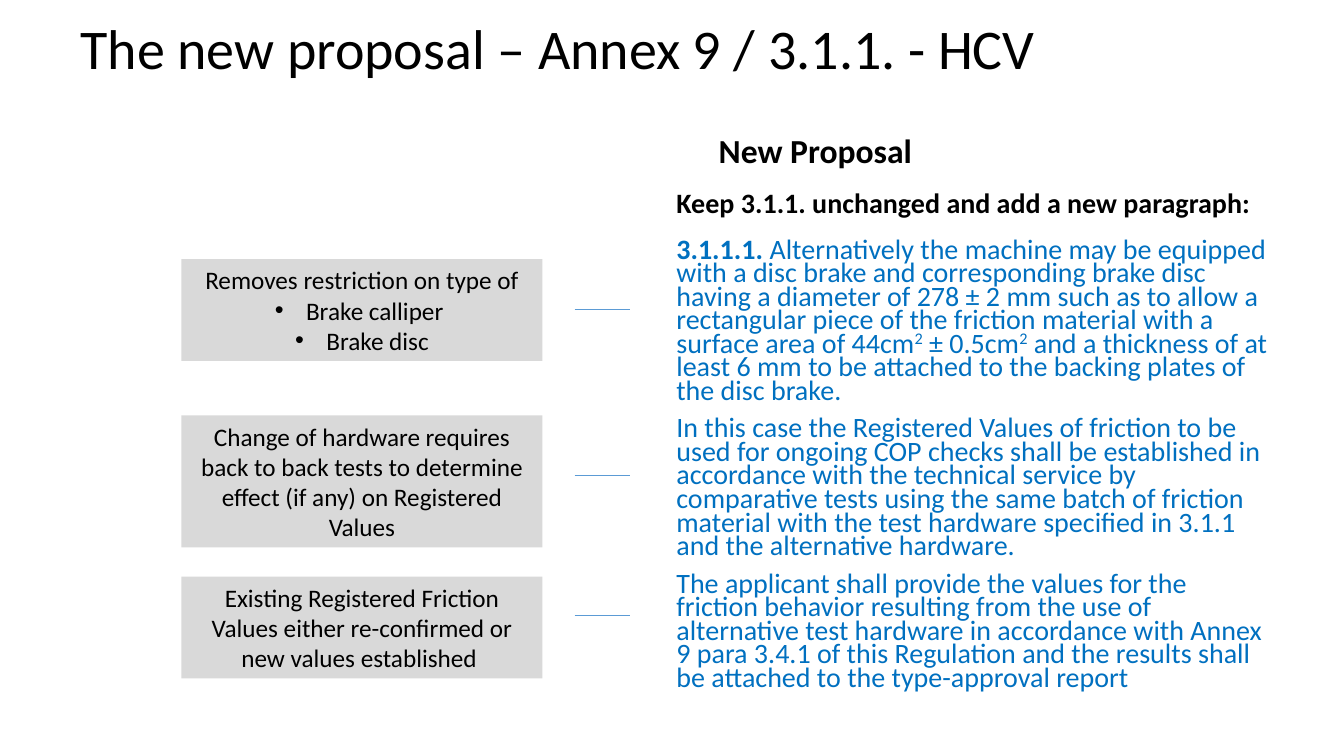
from lxml import etree
from pptx import Presentation
from pptx.dml.color import RGBColor
from pptx.enum.shapes import MSO_CONNECTOR, MSO_SHAPE
from pptx.enum.text import MSO_ANCHOR, PP_ALIGN
from pptx.oxml.ns import qn
from pptx.util import Inches, Pt

RECTANGLE = MSO_SHAPE.RECTANGLE
STRAIGHT = MSO_CONNECTOR.STRAIGHT
TOP, MIDDLE, BOTTOM = MSO_ANCHOR.TOP, MSO_ANCHOR.MIDDLE, MSO_ANCHOR.BOTTOM
CENTER = PP_ALIGN.CENTER

BLACK = RGBColor(0x00, 0x00, 0x00)
BLUE = RGBColor(0x00, 0x70, 0xC0)
GREY = RGBColor(0xD9, 0xD9, 0xD9)
LINE_BLUE = RGBColor(0x5B, 0x9B, 0xD5)

FONT_NAME = "Calibri"
NOTE_LEFT, NOTE_WIDTH = 1.8, 3.58
LINE_LEFT, LINE_RIGHT = 5.7, 6.25
BULLET_INDENT = 0.31

# Top, height, height of the connecting line on the slide, lead text, bullets
NOTES = [
    (2.57, 1.01, 3.07, "Removes restriction on type of", ["Brake calliper ", "Brake disc"]),
    (4.12, 1.31, 4.72, "Change of hardware requires back to back tests to determine "
                       "effect (if any) on Registered Values", []),
    (5.72, 1.01, 6.1, "Existing Registered Friction Values either re-confirmed or "
                      "new values established ", []),
]

PLAIN = {"size": Pt(20), "color": BLUE}
STRONG = {**PLAIN, "bold": True}
HEADING = {**STRONG, "color": BLACK}
RAISED = {**PLAIN, "raised": True}

# Space before in points, then the runs of each paragraph
PROPOSAL = [
    (10, [("Keep 3.1.1. unchanged and add a new paragraph:", HEADING)]),
    (16, [
        ("3.1.1.1. ", STRONG),
        ("Alternatively the machine may be equipped with a disc brake and corresponding "
         "brake disc having a diameter of 278 ± 2 mm such as to allow a rectangular piece "
         "of the friction material with a surface area of 44cm", PLAIN),
        ("2", RAISED),
        (" ± 0.5cm", PLAIN),
        ("2", RAISED),
        (" and a thickness of at least 6 mm to be attached to the backing plates of the "
         "disc brake.", PLAIN),
    ]),
    (10, [("In this case the Registered Values of friction to be used for ongoing COP checks "
           "shall be established in accordance with the technical service by comparative "
           "tests using the same batch of friction material with the test hardware "
           "specified in 3.1.1 and the alternative hardware.", PLAIN)]),
    (10, [("The applicant shall provide the values for the friction behavior resulting from "
           "the use of alternative test hardware in accordance with Annex 9 para 3.4.1 of "
           "this Regulation and the results shall be attached to the type-approval report",
           PLAIN)]),
]


def add_run(paragraph, text, size, color, bold=False, raised=False):
    run = paragraph.add_run()
    run.text = text
    for name, value in {"name": FONT_NAME, "size": size, "bold": bold}.items():
        setattr(run.font, name, value)
    run.font.color.rgb = color
    if raised:
        run.font._element.set("baseline", "30000")


def add_paragraphs(text_frame, paragraphs, **paragraph_format):
    """Fill the frame with (space before, runs) pairs and return its paragraphs."""
    for index, (space_before, runs) in enumerate(paragraphs):
        paragraph = text_frame.add_paragraph() if index else text_frame.paragraphs[0]
        for name, value in {"space_before": Pt(space_before), **paragraph_format}.items():
            setattr(paragraph, name, value)
        for text, font_format in runs:
            add_run(paragraph, text, **font_format)
    return text_frame.paragraphs


def add_text(slide, left, top, width, height, anchor, paragraphs, line_spacing):
    text_box = slide.shapes.add_textbox(Inches(left), Inches(top), Inches(width), Inches(height))
    text_frame = text_box.text_frame
    text_frame.word_wrap = True
    text_frame.vertical_anchor = anchor
    add_paragraphs(text_frame, paragraphs, line_spacing=line_spacing)


def add_bullet(paragraph):
    properties = paragraph._p.get_or_add_pPr()
    properties.set("marL", str(Inches(BULLET_INDENT)))
    properties.set("indent", str(-Inches(BULLET_INDENT)))
    etree.SubElement(properties, qn("a:buFont")).set("typeface", "Arial")
    etree.SubElement(properties, qn("a:buChar")).set("char", "•")


def add_note(slide, top, height, lead, bullets):
    shape = slide.shapes.add_shape(
        RECTANGLE, Inches(NOTE_LEFT), Inches(top), Inches(NOTE_WIDTH), Inches(height))
    shape.shadow.inherit = False
    shape.fill.solid()
    shape.fill.fore_color.rgb = GREY
    shape.line.fill.background()
    shape.text_frame.word_wrap = True
    note_font = {"size": Pt(18), "color": BLACK}
    lines = [(0, [(text, note_font)]) for text in [lead, *bullets]]
    paragraphs = add_paragraphs(shape.text_frame, lines, alignment=CENTER)
    for paragraph in paragraphs[1:]:
        add_bullet(paragraph)


def add_line(slide, height):
    connector = slide.shapes.add_connector(
        STRAIGHT, Inches(LINE_LEFT), Inches(height), Inches(LINE_RIGHT), Inches(height))
    connector.line.color.rgb = LINE_BLUE
    connector.line.width = Pt(0.5)
    etree.SubElement(connector._element.spPr, qn("a:effectLst"))


def main():
    presentation = Presentation()
    presentation.slide_width = Inches(13.33)
    presentation.slide_height = Inches(7.5)
    slide = presentation.slides.add_slide(presentation.slide_layouts[6])

    title = [("The new proposal – Annex 9 / 3.1.1. - HCV", {"size": Pt(40), "color": BLACK})]
    subtitle = [("New Proposal", {**HEADING, "size": Pt(24)})]
    add_text(slide, 0.7, 0.11, 11.5, 0.8, MIDDLE, [(0, title)], 0.9)
    add_text(slide, 7.03, 0.84, 5.67, 0.9, BOTTOM, [(10, subtitle)], 0.9)
    add_text(slide, 6.61, 1.88, 6.09, 5.19, TOP, PROPOSAL, 0.7)

    for top, height, line_height, lead, bullets in NOTES:
        add_note(slide, top, height, lead, bullets)
        add_line(slide, line_height)

    presentation.save("out.pptx")


if __name__ == "__main__":
    main()
